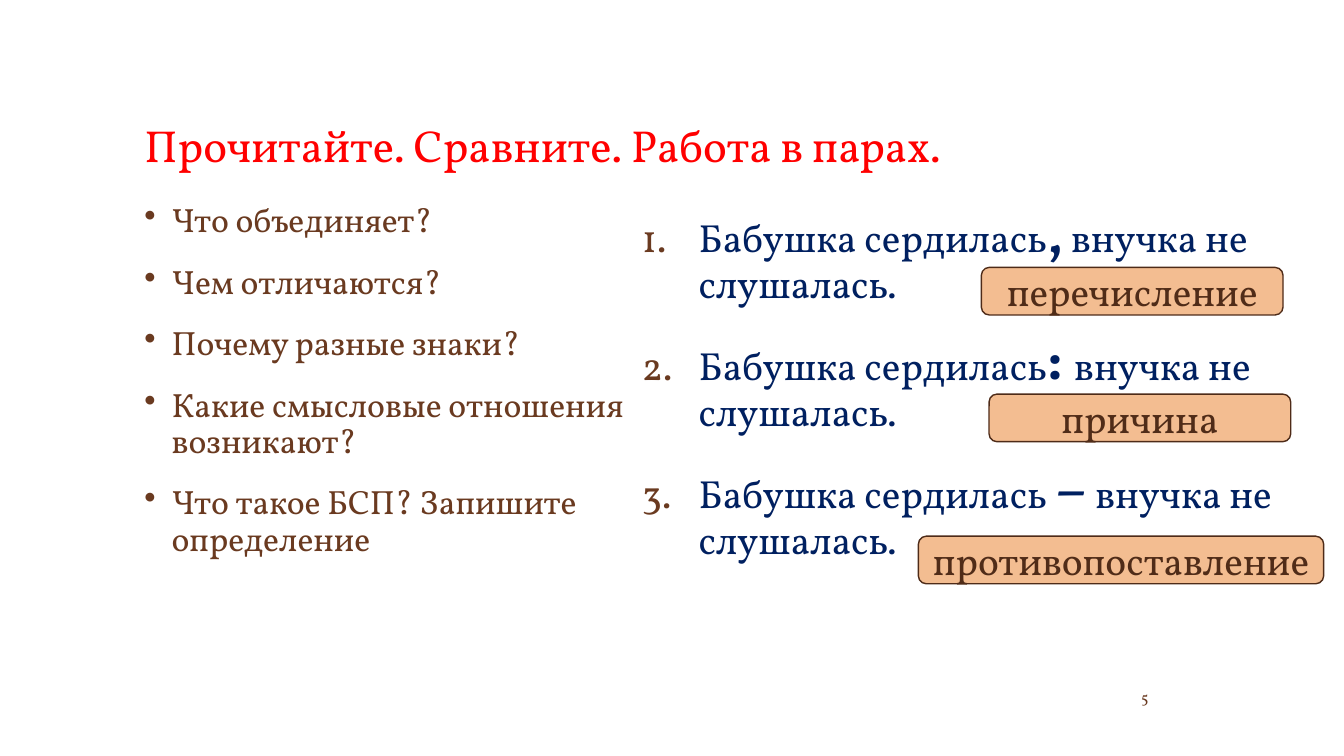
from lxml.etree import SubElement as Sub
from pptx import Presentation
from pptx.dml.color import RGBColor
from pptx.enum.shapes import MSO_SHAPE as Shape
from pptx.enum.text import MSO_ANCHOR as Anchor, MSO_AUTO_SIZE as Auto, PP_ALIGN as Align
from pptx.oxml.ns import qn
from pptx.util import Pt

BROWN, NAVY = "6A3A20", "002060"


def color(code):
    return RGBColor.from_string(code)


def apply(item, values):
    for name, value in values.items():
        setattr(item, name, value)


class Deck:
    face = "Vollkorn"

    def __init__(self, wide, high):
        self.prs = Presentation()
        apply(self.prs, {"slide_width": Pt(wide), "slide_height": Pt(high)})
        self.slide = self.prs.slides.add_slide(self.prs.slide_layouts[5])

    def run(self, para, text, size, tint, bold=False):
        run = para.add_run()
        run.text = text
        apply(run.font, {"name": self.face, "size": Pt(size), "bold": bold})
        run.font.color.rgb = color(tint)

    def frame(self, shape, anchor):
        apply(shape.text_frame, {"word_wrap": True, "auto_size": Auto.NONE,
                                 "vertical_anchor": anchor})
        return shape.text_frame

    def title(self, box, text, size, tint):
        shape = self.slide.shapes.title
        apply(shape, dict(zip(("left", "top", "width", "height"), map(Pt, box))))
        para = self.frame(shape, Anchor.BOTTOM).paragraphs[0]
        para.alignment = Align.LEFT
        self.run(para, text, size, tint)

    def text(self, box, anchor=Anchor.TOP):
        return self.frame(self.slide.shapes.add_textbox(*map(Pt, box)), anchor)

    def label(self, box, text, size, tint):
        para = self.text(box, Anchor.MIDDLE).paragraphs[0]
        self.run(para, text, size, tint)

    def list(self, box, items, indent, mark, value):
        """Each item is a list of (text, size, colour, bold) runs."""
        frame = self.text(box)
        for i, item in enumerate(items):
            para = frame.add_paragraph() if i else frame.paragraphs[0]
            apply(para, {"line_spacing": 0.9, "space_before": Pt(18 if i else 0)})
            # Bullet or number
            props = para._p.get_or_add_pPr()
            props.set("marL", str(Pt(indent)))
            props.set("indent", str(Pt(-indent)))
            Sub(Sub(props, qn("a:buClr")), qn("a:srgbClr"), val=BROWN)
            Sub(props, qn("a:" + mark), value)
            for part in item:
                self.run(para, *part)

    def pill(self, box, text):
        shape = self.slide.shapes.add_shape(Shape.ROUNDED_RECTANGLE, *map(Pt, box))
        shape.shadow.inherit = False
        shape.fill.solid()
        shape.fill.fore_color.rgb = color("F3BD91")
        shape.line.color.rgb = color("4E2B18")
        shape.line.width = Pt(1)
        para = self.frame(shape, Anchor.MIDDLE).paragraphs[0]
        para.alignment = Align.CENTER
        self.run(para, text, 28, "502C18")


def main():
    deck = Deck(960, 540)
    deck.title((96, 34, 767.5, 92), "Прочитайте. Сравните. Работа в парах.", 32, "FF0000")

    # Questions on the left
    asks = ("Что объединяет?", "Чем отличаются?", "Почему разные знаки?",
            "Какие смысловые отношения возникают?",
            "Что такое БСП? Запишите определение")
    deck.list((96, 142, 376, 336), [[(ask, 24, BROWN)] for ask in asks],
              19.5, "buChar", {"char": "•"})

    # Sentences that differ only in the sign
    signs = (("", ",", " "), ("", ": ", ""), (" ", "–", " "))
    lines = [[("Бабушка сердилась" + pre, 28, NAVY),
              (sign, 40, NAVY, True),
              (post + "внучка не слушалась.", 28, NAVY)]
             for pre, sign, post in signs]
    deck.list((451.5, 142, 476, 336), lines, 40.5,
              "buAutoNum", {"type": "arabicPeriod"})

    # Answers
    for left, top, wide, word in ((701, 191, 215.5, "перечисление"),
                                  (706.5, 281.5, 215.5, "причина"),
                                  (656, 383, 289.5, "противопоставление")):
        deck.pill((left, top, wide, 34), word)

    # Slide number
    deck.label((808, 486, 56, 24), "5", 11, BROWN)
    deck.prs.save("out.pptx")


if __name__ == "__main__":
    main()
